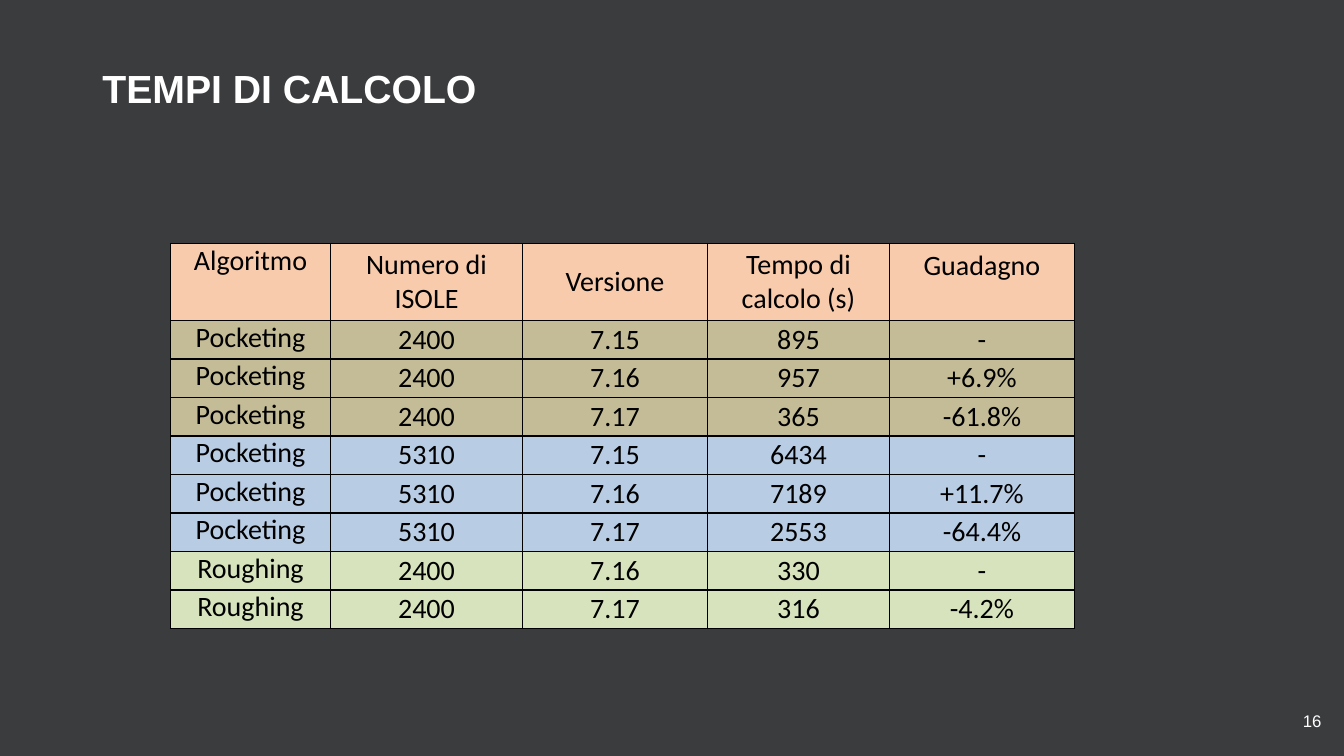
from lxml.etree import SubElement
from pptx import Presentation
from pptx.dml.color import RGBColor
from pptx.enum.text import MSO_ANCHOR as Anchor, PP_ALIGN as Align
from pptx.oxml.ns import qn
from pptx.util import Pt

COLORS = {
    "background": "3B3C3E",
    "light": "FFFFFF",
    "dark": "000000",
    "header": "F8CBAD",
    "sand": "C4BC96",
    "blue": "B8CCE4",
    "green": "D6E3BC",
}
HEADERS = ["Algoritmo", "Numero di ISOLE", "Versione", "Tempo di calcolo (s)", "Guadagno"]
GROUPS = [
    ("Pocketing", "2400", "sand", [("7.15", "895", "-"), ("7.16", "957", "+6.9%"), ("7.17", "365", "-61.8%")]),
    ("Pocketing", "5310", "blue", [("7.15", "6434", "-"), ("7.16", "7189", "+11.7%"), ("7.17", "2553", "-64.4%")]),
    ("Roughing", "2400", "green", [("7.16", "330", "-"), ("7.17", "316", "-4.2%")]),
]
COLUMN_WIDTHS = [114.3, 137.1, 132.2, 130, 132.1]
ROW_HEIGHT = 27.5


def style_text(frame, font_name, size, color, align, bold=False):
    para = frame.paragraphs[0]
    para.alignment = align
    for span in para.runs:
        span.font.name = font_name
        span.font.size = Pt(size)
        span.font.bold = bold
        span.font.color.rgb = RGBColor.from_string(COLORS[color])


def add_borders(cell, color):
    properties = cell._tc.get_or_add_tcPr()
    for side in ("lnL", "lnR", "lnT", "lnB"):
        line = SubElement(properties, qn(f"a:{side}"), w=str(Pt(1)))
        fill = SubElement(line, qn("a:solidFill"))
        SubElement(fill, qn("a:srgbClr"), val=COLORS[color])


# Page
deck = Presentation()
deck.slide_width, deck.slide_height = Pt(960), Pt(540)
page = deck.slides.add_slide(deck.slide_layouts.get_by_name("Title Only"))
page.background.fill.solid()
page.background.fill.fore_color.rgb = RGBColor.from_string(COLORS["background"])

# Title
title = page.shapes.title
title.left, title.top, title.width, title.height = Pt(66), Pt(46), Pt(459.5), Pt(38)
title.text_frame.text = "TEMPI DI CALCOLO"
title.text_frame.vertical_anchor = Anchor.MIDDLE
title.text_frame.paragraphs[0].line_spacing = 0.9
style_text(title.text_frame, "Arial", 28, "light", Align.LEFT, bold=True)

# Table rows: the header, then one block of versions for each group
rows = [(HEADERS, "header")]
for algorithm, islands, color, runs in GROUPS:
    rows += [([algorithm, islands, *run], color) for run in runs]

table = page.shapes.add_table(
    len(rows), len(HEADERS), Pt(121.8), Pt(173.9),
    Pt(sum(COLUMN_WIDTHS)), Pt(ROW_HEIGHT * (len(rows) + 1)),
).table
for column, width in zip(table.columns, COLUMN_WIDTHS):
    column.width = Pt(width)

for row_index, (values, color) in enumerate(rows):
    table.rows[row_index].height = Pt(ROW_HEIGHT * (2 if row_index == 0 else 1))
    for column_index, value in enumerate(values):
        cell = table.cell(row_index, column_index)
        cell.text = value
        cell.margin_left = cell.margin_right = Pt(3)
        cell.margin_top = cell.margin_bottom = Pt(0)
        cell.vertical_anchor = Anchor.TOP if column_index == 0 else Anchor.MIDDLE
        add_borders(cell, "dark")
        cell.fill.solid()
        cell.fill.fore_color.rgb = RGBColor.from_string(COLORS[color])
        style_text(cell.text_frame, "Calibri", 20, "dark", Align.CENTER)

# The last header lines up with the first line of its neighbours
gain_header = table.cell(0, len(HEADERS) - 1)
gain_header.vertical_anchor = Anchor.TOP
gain_header.margin_top = Pt(3.5)

# Page number
number_box = page.shapes.add_textbox(Pt(904.5), Pt(500.5), Pt(46.5), Pt(29))
number_box.text_frame.text = "16"
number_box.text_frame.word_wrap = True
number_box.text_frame.vertical_anchor = Anchor.MIDDLE
style_text(number_box.text_frame, "Arial", 12, "light", Align.RIGHT)

deck.save("out.pptx")
